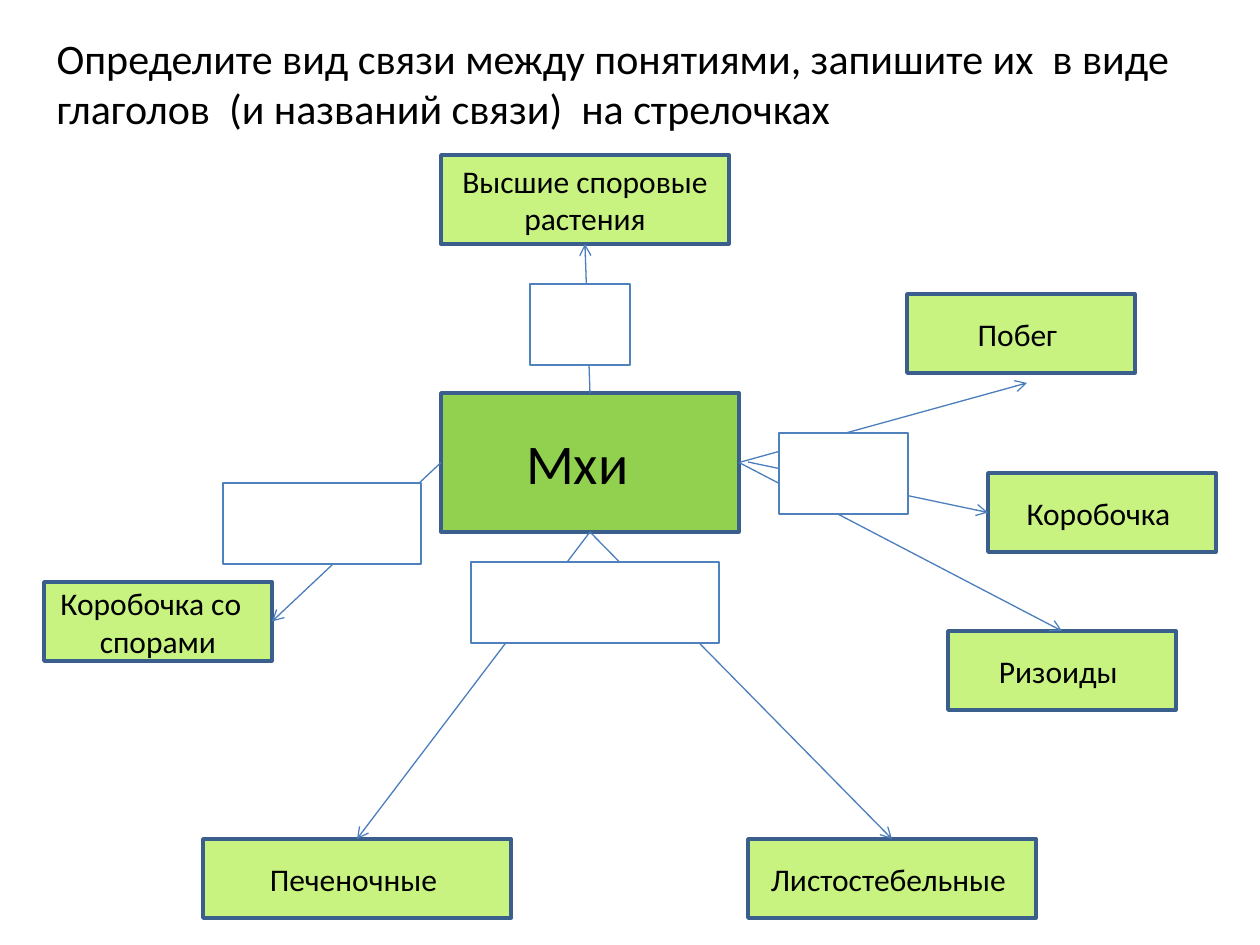
"""Build a concept map slide about mosses."""
from lxml import etree
from pptx import Presentation
from pptx import util as u
from pptx.dml.color import RGBColor
from pptx.enum import shapes, text
from pptx.oxml.ns import qn

SCALE = 914400 / 126
TOP, LEFT, BOTTOM, RIGHT = range(4)
TITLE = ("Определите вид связи между понятиями, запишите их  в виде "
         "глаголов  (и названий связи)  на стрелочках")
TITLE_AREA = (44, 26, 1160, 115)
CONCEPTS = {
    "moss": ("Мхи  ", (441, 393, 298, 139), "92D050", 32),
    "spore plants": ("Высшие споровые растения", (441, 155, 288, 89), "C8F381", 18),
    "shoot": ("Побег ", (907, 294, 228, 79), "C8F381", 18),
    "spore capsule": ("Коробочка со   спорами", (44, 582, 228, 79), "C8F381", 18),
    "liverworts": ("Печеночные ", (203, 839, 308, 79), "C8F381", 18),
    "leafy mosses": ("Листостебельные ", (748, 839, 288, 79), "C8F381", 18),
    "capsule": ("Коробочка ", (988, 473, 228, 79), "C8F381", 18),
    "rhizoids": ("Ризоиды ", (948, 631, 228, 79), "C8F381", 18),
}
ARROWS = [
    (("moss", TOP), ("spore plants", BOTTOM)),
    (("moss", BOTTOM), ("liverworts", TOP)),
    (("moss", BOTTOM), ("leafy mosses", TOP)),
    (("moss", RIGHT), (1027, 383)),
    (("moss", LEFT), ("spore capsule", RIGHT)),
    ((748, 462), ("capsule", LEFT)),
    (("moss", RIGHT), ("rhizoids", TOP)),
]
BLANKS = [(471, 562, 248, 81), (530, 284, 100, 81),
          (223, 483, 198, 81), (779, 433, 129, 81)]


def px(value):
    return u.Emu(round(value * SCALE))


def color(value):
    return RGBColor.from_string(value)


def write(shape, words, size, align, anchor):
    frame = shape.text_frame
    frame.word_wrap = True
    frame.auto_size = text.MSO_AUTO_SIZE.NONE
    frame.vertical_anchor = anchor
    para = frame.paragraphs[0]
    para.alignment = align
    span = para.add_run()
    span.text = words
    span.font.name = "Calibri"
    span.font.size = u.Pt(size)
    span.font.color.rgb = color("000000")


def add_box(page, area, fill, line, width):
    box = page.shapes.add_shape(shapes.MSO_SHAPE.RECTANGLE, *map(px, area))
    box.shadow.inherit = False
    box.fill.solid()
    box.fill.fore_color.rgb = color(fill)
    box.line.color.rgb = color(line)
    box.line.width = u.Pt(width)
    return box


def add_arrow(page, boxes, start, end):
    arrow = page.shapes.add_connector(shapes.MSO_CONNECTOR.STRAIGHT, 0, 0, 0, 0)
    if start[0] in boxes:
        arrow.begin_connect(boxes[start[0]], start[1])
    else:
        arrow.begin_x, arrow.begin_y = map(px, start)
    if end[0] in boxes:
        arrow.end_connect(boxes[end[0]], end[1])
    else:
        arrow.end_x, arrow.end_y = map(px, end)
    arrow.line.color.rgb = color("4B7EBC")
    arrow.line.width = u.Pt(0.75)
    etree.SubElement(arrow.line._get_or_add_ln(), qn("a:tailEnd"), type="arrow")
    etree.SubElement(arrow._element.spPr, qn("a:effectLst"))


def main():
    deck = Presentation()
    deck.slide_width, deck.slide_height = px(1260), px(945)
    page = deck.slides.add_slide(deck.slide_layouts.get_by_name("Title Only"))
    title = page.shapes.title
    title.left, title.top, title.width, title.height = map(px, TITLE_AREA)
    write(title, TITLE, 24, text.PP_ALIGN.LEFT, text.MSO_ANCHOR.TOP)

    boxes = {}
    for name, (words, area, fill, size) in CONCEPTS.items():
        boxes[name] = add_box(page, area, fill, "3A5F8C", 2)
        write(boxes[name], words, size, text.PP_ALIGN.CENTER, text.MSO_ANCHOR.MIDDLE)
    for start, end in ARROWS:
        add_arrow(page, boxes, start, end)
    for area in BLANKS:
        add_box(page, area, "FFFFFF", "4F81BD", 0.75)
    deck.save("out.pptx")


if __name__ == "__main__":
    main()
